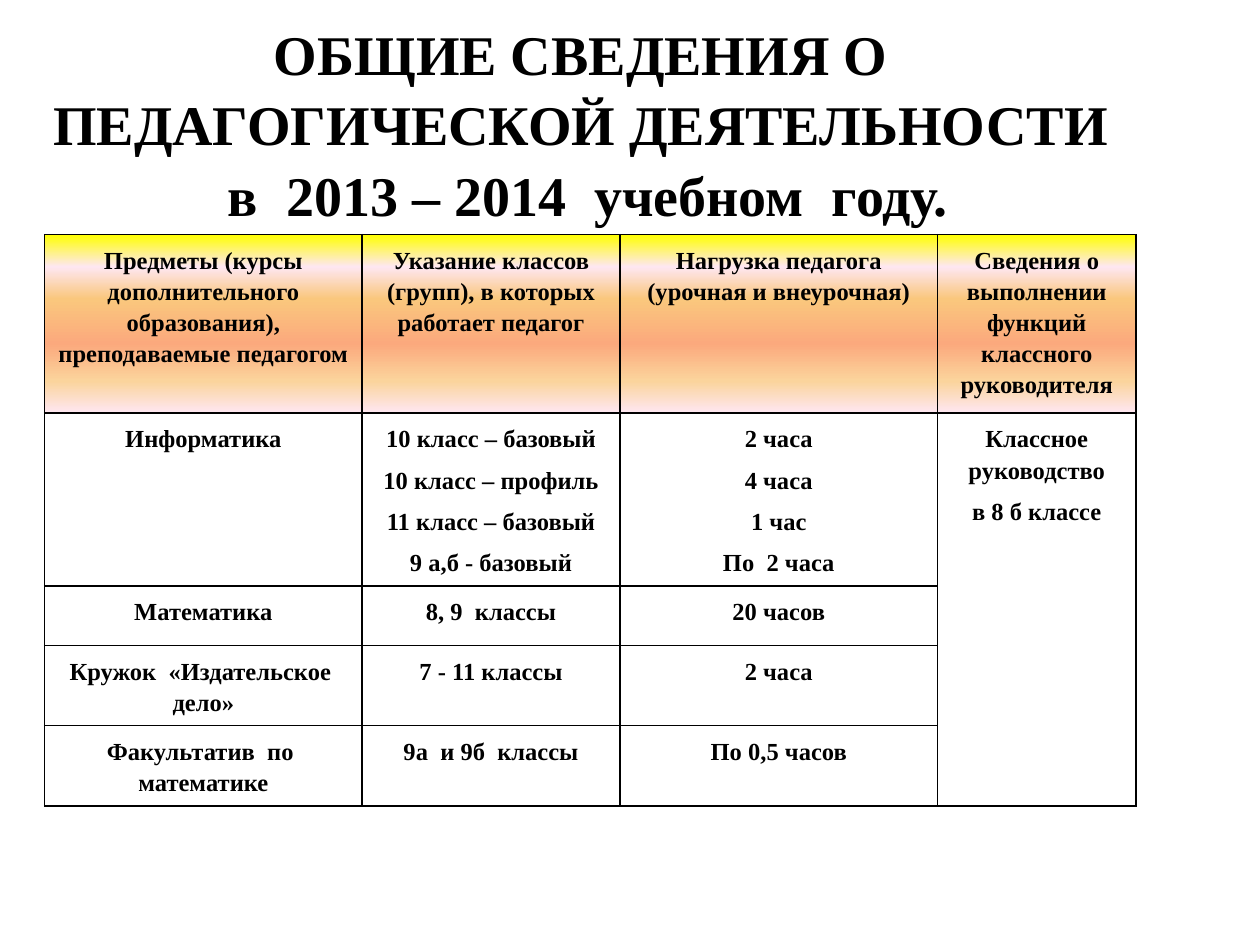
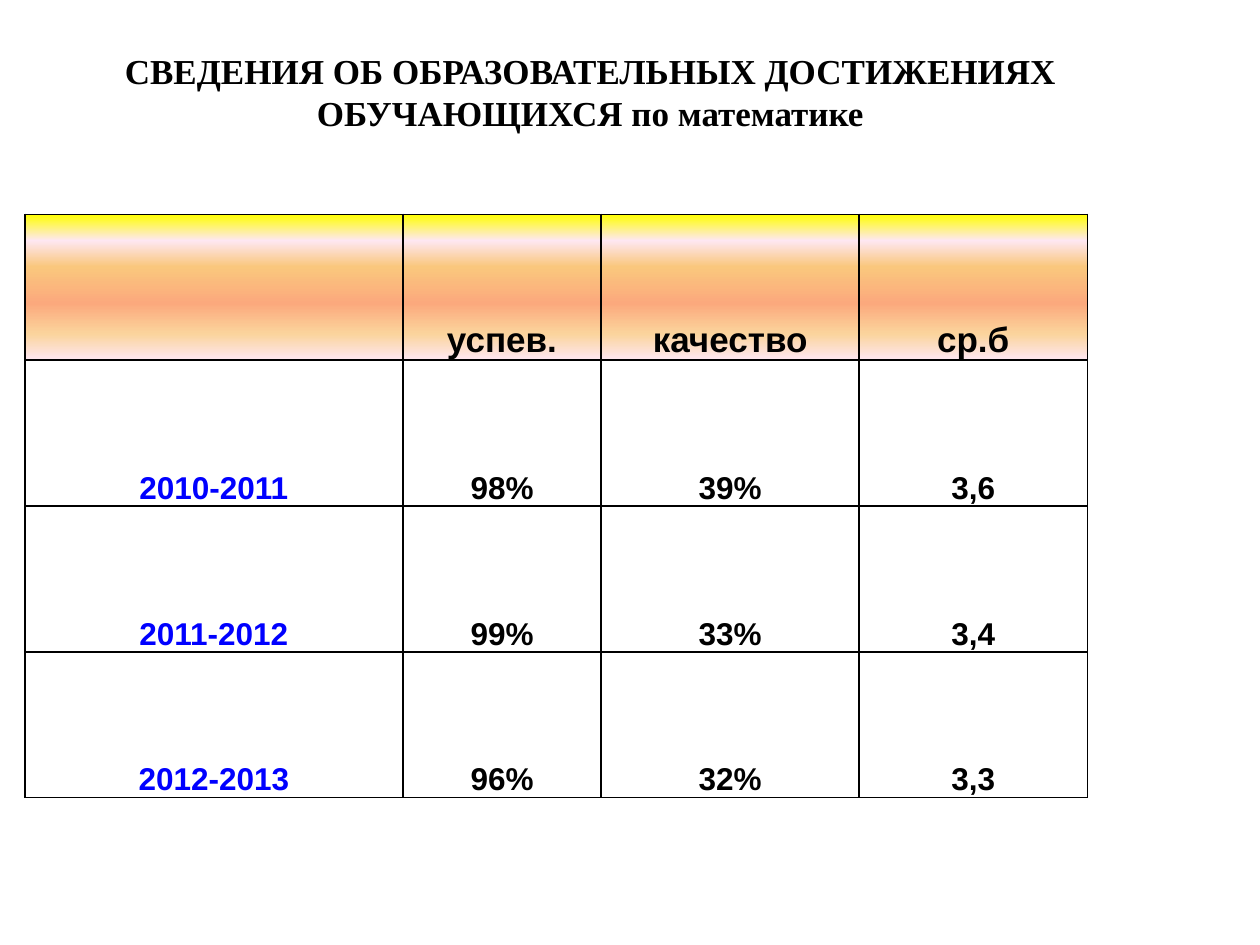
"""Build two slides about teaching load and pupils' results."""
import lxml.etree
import pptx
import pptx.dml.color
import pptx.enum.text
import pptx.oxml.ns
import pptx.util

Cm = pptx.util.Cm
Pt = pptx.util.Pt
RGBColor = pptx.dml.color.RGBColor
ANCHOR = pptx.enum.text.MSO_ANCHOR
CENTER = pptx.enum.text.PP_ALIGN.CENTER
qn = pptx.oxml.ns.qn

BLACK = RGBColor(0x00, 0x00, 0x00)
BLUE = RGBColor(0x00, 0x00, 0xFF)
YELLOW = RGBColor(0xFF, 0xFF, 0x00)
PINK = RGBColor(0xFE, 0xE7, 0xF2)
AMBER = RGBColor(0xFA, 0xC7, 0x7D)
SALMON = RGBColor(0xFB, 0xA9, 0x7D)
SAND = RGBColor(0xFB, 0xD4, 0x9C)
HEADER_STOPS = ((0, YELLOW), (18, PINK), (36, AMBER),
                (61, SALMON), (82, SAND), (100, PINK))
SERIF = "Times New Roman"
SANS = "Arial"


class Deck:
    def __init__(self):
        self.prs = pptx.Presentation()
        self.prs.slide_width = Cm(25.4)
        self.prs.slide_height = Cm(19.05)
        self.s = None

    def slide(self):
        self.s = self.prs.slides.add_slide(self.prs.slide_layouts[5])

    def style(self, p, size, name, color=BLACK, spacing=1.0, after=0):
        p.alignment = CENTER
        p.line_spacing = spacing
        p.space_after = Pt(after)
        p.font.size = Pt(size)
        p.font.name = name
        p.font.bold = True
        p.font.color.rgb = color

    def title(self, text, box, size, spacing=1.0):
        sp = self.s.shapes.title
        sp.left, sp.top, sp.width, sp.height = (Cm(v) for v in box)
        tf = sp.text_frame
        tf.text = text
        tf.word_wrap = True
        tf.auto_size = pptx.enum.text.MSO_AUTO_SIZE.NONE
        tf.vertical_anchor = ANCHOR.MIDDLE
        self.style(tf.paragraphs[0], size, SERIF, spacing=spacing)

    def solid(self, parent, color):
        fill = lxml.etree.SubElement(parent, qn("a:solidFill"))
        lxml.etree.SubElement(fill, qn("a:srgbClr"), val=str(color))

    def borders(self, cell):
        tc_pr = cell._tc.get_or_add_tcPr()
        for side in "LRTB":
            ln = lxml.etree.SubElement(tc_pr, qn(f"a:ln{side}"), w=str(Pt(1)))
            self.solid(ln, BLACK)

    def header_fill(self, cell):
        tc_pr = cell._tc.get_or_add_tcPr()
        grad = lxml.etree.SubElement(tc_pr, qn("a:gradFill"))
        stops = lxml.etree.SubElement(grad, qn("a:gsLst"))
        for position, color in HEADER_STOPS:
            gs = lxml.etree.SubElement(stops, qn("a:gs"), pos=str(position * 1000))
            lxml.etree.SubElement(gs, qn("a:srgbClr"), val=str(color))
        lxml.etree.SubElement(grad, qn("a:lin"), ang="5400000", scaled="0")

    def table(self, left, top, widths, heights, rows, inset, anchor, text_style):
        table = self.s.shapes.add_table(
            len(rows), len(widths), Cm(left), Cm(top),
            Cm(sum(widths)), Cm(sum(heights))).table
        table.first_row = table.horz_banding = False
        for column, width in zip(table.columns, widths):
            column.width = Cm(width)
        for row, height in zip(table.rows, heights):
            row.height = Cm(height)
        for i, row in enumerate(rows):
            for j, text in enumerate(row):
                cell = table.cell(i, j)
                cell.margin_left = cell.margin_right = Cm(0.18)
                cell.margin_top = cell.margin_bottom = Cm(inset)
                cell.vertical_anchor = anchor
                self.borders(cell)
                if i == 0:
                    self.header_fill(cell)
                else:
                    cell.fill.background()
                if text:
                    cell.text_frame.text = text
                    for p in cell.text_frame.paragraphs:
                        self.style(p, spacing=1.15, **text_style(i, j))
        return table


def load_style(i, j):
    return {"size": 14, "name": SERIF, "after": 5.8 if i else 0}


def results_style(i, j):
    return {"size": 18 if i else 20, "name": SANS,
            "color": BLUE if j == 0 else BLACK}


def main():
    deck = Deck()

    deck.slide()
    deck.title("ОБЩИЕ СВЕДЕНИЯ О ПЕДАГОГИЧЕСКОЙ ДЕЯТЕЛЬНОСТИ  "
               "в  2013 – 2014  учебном  году.",
               (0.7, 0.3, 22.02, 4.3), 32, spacing=1.05)
    load_rows = [
        ("Предметы (курсы дополнительного образования), преподаваемые педагогом",
         "Указание классов (групп), в которых работает педагог",
         "Нагрузка педагога\n(урочная и внеурочная)",
         "Сведения о выполнении функций классного руководителя"),
        ("Информатика",
         "10 класс – базовый\n10 класс – профиль\n11 класс – базовый\n9 а,б - базовый",
         "2 часа\n4 часа\n1 час\nПо  2 часа",
         "Классное руководство\nв 8 б классе"),
        ("Математика", "8, 9  классы", "20 часов", ""),
        ("Кружок  «Издательское  дело»", "7 - 11 классы", "2 часа", ""),
        ("Факультатив  по  математике", "9а  и 9б  классы", "По 0,5 часов", ""),
    ]
    table = deck.table(0.9, 4.73, (6.4, 5.2, 6.4, 4), (3.6, 3.45, 1.2, 1.6, 1.6),
                       load_rows, 0.18, ANCHOR.TOP, load_style)
    table.cell(1, 3).merge(table.cell(4, 3))

    deck.slide()
    deck.title("СВЕДЕНИЯ ОБ ОБРАЗОВАТЕЛЬНЫХ ДОСТИЖЕНИЯХ ОБУЧАЮЩИХСЯ по математике",
               (1.3, 0.8, 21.2, 2.1), 20)
    results_rows = [
        ("", "успев.", "качество", "ср.б"),
        ("2010-2011", "98%", "39%", "3,6"),
        ("2011-2012", "99%", "33%", "3,4"),
        ("2012-2013", "96%", "32%", "3,3"),
    ]
    deck.table(0.5, 4.32, (7.62, 4, 5.2, 4.6), (2.94,) * 4,
               results_rows, 0, ANCHOR.BOTTOM, results_style)

    deck.prs.save("out.pptx")


if __name__ == "__main__":
    main()
